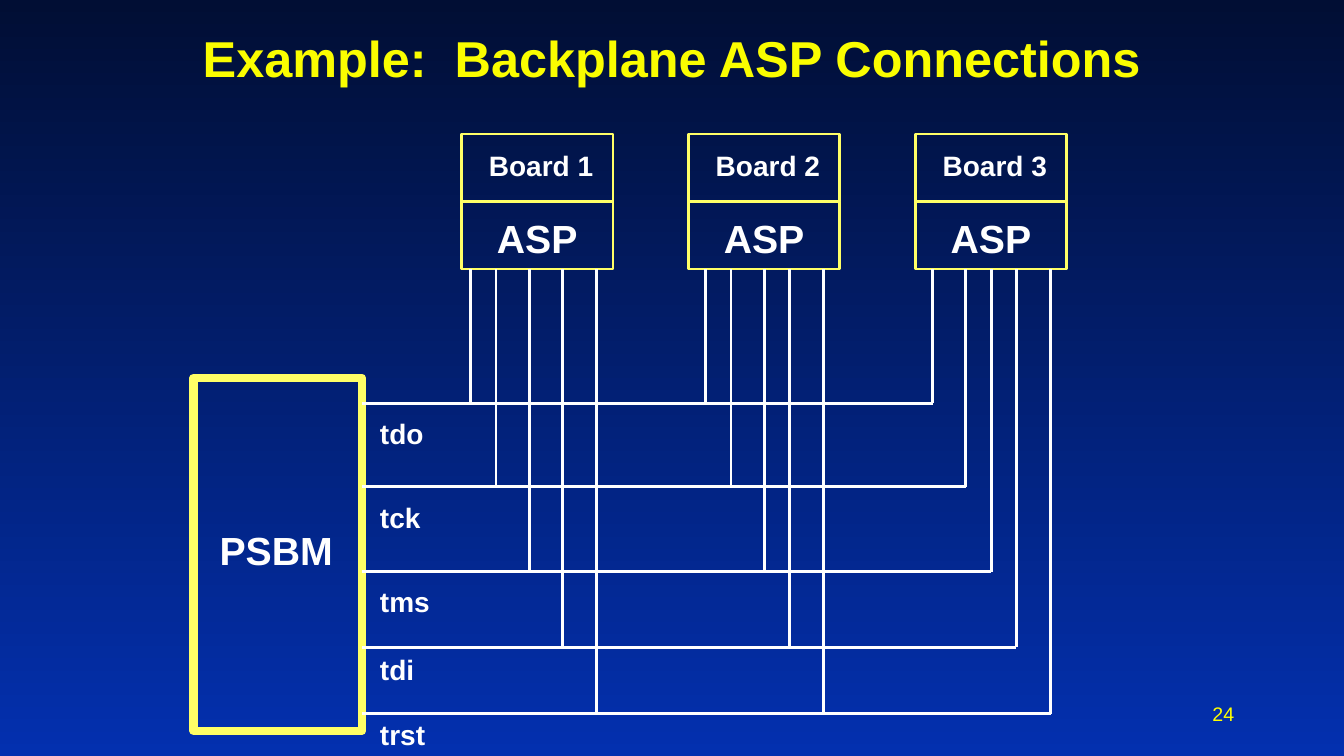
import pptx
import pptx.util
import pptx.dml.color
import pptx.enum.shapes
import pptx.enum.text
import pptx.oxml.ns
import lxml.etree

Inches = pptx.util.Inches
ALIGN = pptx.enum.text.PP_ALIGN
ANCHOR = pptx.enum.text.MSO_ANCHOR

COLORS = {
    "top": "010E34",
    "base": "0330AF",
    "title": "FAFD00",
    "frame": "FFFF66",
    "wire": "FFFFFF",
    "text": "FFFFFF",
    "page": "FFFF00",
}


class Deck:
    font = "Arial"

    def __init__(self, wide, high):
        self.file = pptx.Presentation()
        self.file.slide_width = Inches(wide)
        self.file.slide_height = Inches(high)
        self.slide = self.file.slides.add_slide(self.file.slide_layouts[6])
        self.shapes = self.slide.shapes

    def color(self, name):
        return pptx.dml.color.RGBColor.from_string(COLORS[name])

    def back(self, *names):
        fill = self.slide.background.fill
        fill.gradient()
        fill.gradient_angle = 270
        for place, (stop, name) in enumerate(zip(fill.gradient_stops, names)):
            stop.position = place
            stop.color.rgb = self.color(name)

    def group(self):
        self.shapes = self.slide.shapes.add_group_shape().shapes

    def ungroup(self):
        self.shapes = self.slide.shapes

    def box(self, x, y, w, h, width):
        kind = pptx.enum.shapes.MSO_SHAPE.RECTANGLE
        box = self.shapes.add_shape(kind, Inches(x), Inches(y), Inches(w), Inches(h))
        box.shadow.inherit = False
        box.fill.background()
        box.line.color.rgb = self.color("frame")
        box.line.width = pptx.util.Pt(width)

    def wire(self, x1, y1, x2, y2):
        kind = pptx.enum.shapes.MSO_CONNECTOR.STRAIGHT
        wire = self.shapes.add_connector(
            kind, Inches(x1), Inches(y1), Inches(x2), Inches(y2))
        wire.line.color.rgb = self.color("wire")
        wire.line.width = pptx.util.Pt(2)
        lxml.etree.SubElement(
            wire._element.spPr, pptx.oxml.ns.qn("a:effectLst"))

    def text(self, words, x, y, w, h, size, color="text", bold=True,
             align=ALIGN.LEFT, anchor=ANCHOR.TOP, before=2, wrap=True):
        area = self.shapes.add_textbox(Inches(x), Inches(y), Inches(w), Inches(h))
        frame = area.text_frame
        frame.word_wrap = wrap
        frame.vertical_anchor = anchor
        para = frame.paragraphs[0]
        para.alignment = align
        para.space_before = pptx.util.Pt(before)
        run = para.add_run()
        run.text = words
        run.font.name = self.font
        run.font.size = pptx.util.Pt(size)
        run.font.bold = bold
        run.font.color.rgb = self.color(color)


# Each signal: name, height of its bus line, top of its label
SIGNALS = [
    ("tdo", 4, 4.08),
    ("tck", 4.83, 4.92),
    ("tms", 5.67, 5.75),
    ("tdi", 6.42, 6.42),
    ("trst", 7.08, 7.07),
]

# Each board: name, left edge, drop of each signal in order
BOARDS = [
    ("Board 3", 9.08, (9.25, 9.58, 9.83, 10.08, 10.42)),
    ("Board 2", 6.83, (7, 7.25, 7.58, 7.83, 8.17)),
    ("Board 1", 4.58, (4.67, 4.92, 5.25, 5.58, 5.92)),
]


def main():
    deck = Deck(13.33, 7.5)
    deck.back("top", "base")

    # Title
    deck.text("Example:  Backplane ASP Connections", 1, 0.25, 11.33, 0.67, 36,
              color="title", align=ALIGN.CENTER, anchor=ANCHOR.BOTTOM, before=0)

    # Bus master
    deck.group()
    deck.box(1.92, 3.75, 1.67, 3.5, 6)
    deck.text("PSBM", 2.08, 5.17, 1.33, 0.57, 28)

    # Boards with their drops to the bus
    for name, left, drops in BOARDS:
        deck.group()
        for top in (1.33, 2):
            deck.box(left, top, 1.5, 0.67, 2)
        deck.text(name, left + 0.17, 1.42, 1.42, 0.44, 20)
        deck.text("ASP", left + 0.25, 2.08, 1.08, 0.57, 28)
        for x, (_, level, _) in zip(drops, SIGNALS):
            deck.wire(x, 2.67, x, level)

    # Bus lines, each ending at its drop on the last board
    ends = BOARDS[0][2]
    for end, (name, level, top) in zip(ends, SIGNALS):
        deck.group()
        deck.wire(3.59, level, end, level)
        deck.text(name, 3.67, top, 0.75, 0.44, 20)

    # Page number
    deck.ungroup()
    deck.text("24", 9.56, 6.83, 2.78, 0.5, 14, color="page", bold=False,
              align=ALIGN.RIGHT, anchor=ANCHOR.MIDDLE, before=0, wrap=False)

    deck.file.save("out.pptx")


if __name__ == "__main__":
    main()
